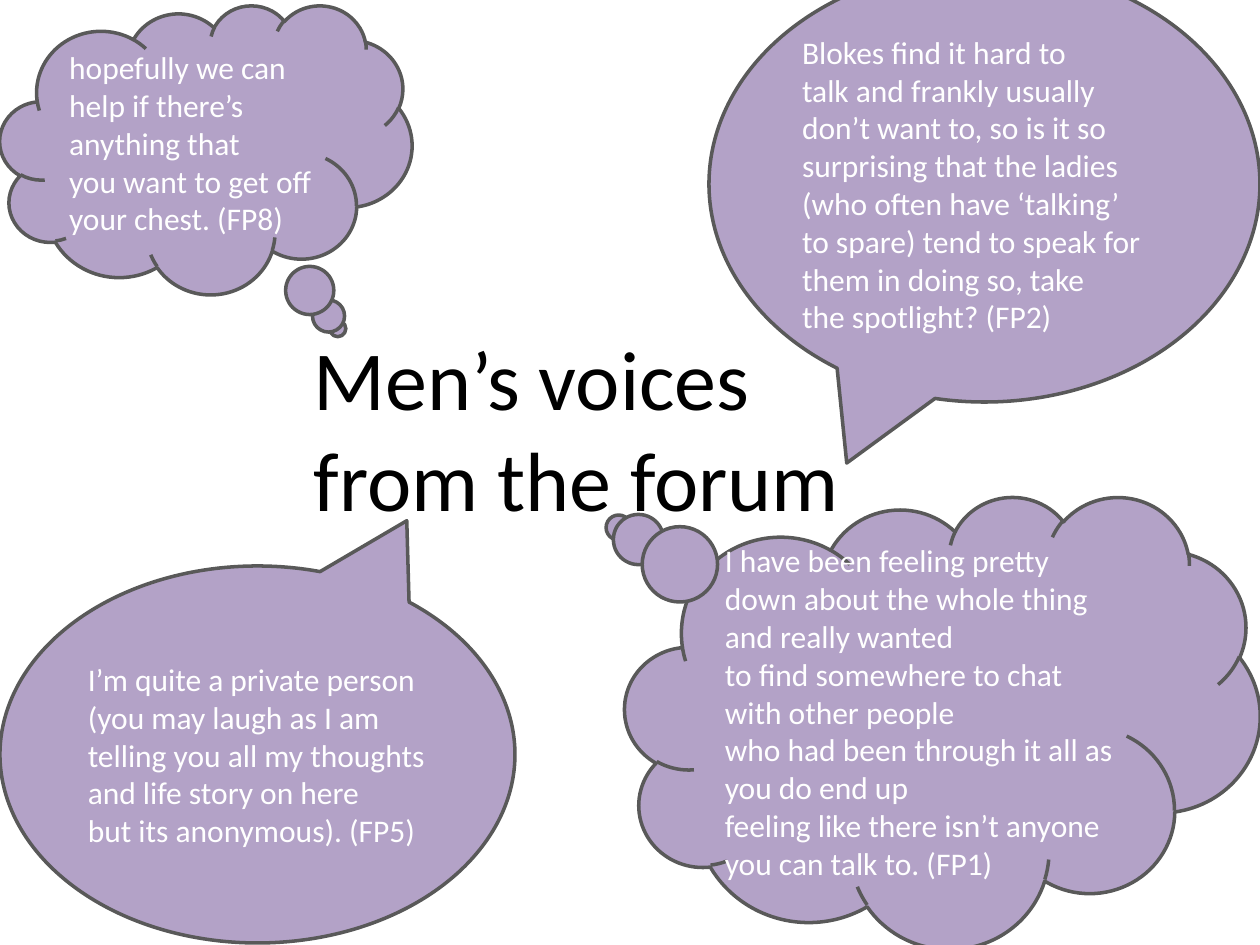
from pptx import Presentation
from pptx.dml.color import RGBColor
from pptx.enum.shapes import MSO_SHAPE
from pptx.enum.text import MSO_ANCHOR, MSO_AUTO_SIZE, PP_ALIGN
from pptx.util import Pt

SPEECH = MSO_SHAPE.OVAL_CALLOUT
THOUGHT = MSO_SHAPE.CLOUD_CALLOUT
TOP, MIDDLE = MSO_ANCHOR.TOP, MSO_ANCHOR.MIDDLE
LEFT = PP_ALIGN.LEFT
FIT_SHAPE = MSO_AUTO_SIZE.SHAPE_TO_FIT_TEXT
PX = 914400 / 126
TITLE_ONLY = 5

# Content: title, then bubbles as (kind, box in px, tail offset, paragraphs)
TITLE = "Men’s voices from the forum"
TITLE_BOX = (301, 320, 640, 217)
BUBBLES = [
    (SPEECH, (709, -34, 551, 436), (-0.25, 0.64), [
        "Blokes find it hard to",
        "talk and frankly usually don’t want to, so is it so",
        "surprising that the ladies (who often have ‘talking’",
        "to spare) tend to speak for them in doing so, take",
        "the spotlight? (FP2)",
    ]),
    (THOUGHT, (0, 5, 412, 289), (0.32, 0.62), [
        "hopefully we can help if there’s anything that",
        "you want to get off your chest. (FP8)",
    ]),
    (SPEECH, (0, 566, 515, 377), (0.29, -0.62), [
        "I’m quite a private person (you may laugh as I am",
        "telling you all my thoughts and life story on here",
        "but its anonymous). (FP5)",
    ]),
    (THOUGHT, (625, 496, 635, 452), (-0.51, -0.43), [
        "I have been feeling pretty",
        "down about the whole thing and really wanted",
        "to find somewhere to chat with other people",
        "who had been through it all as you do end up",
        "feeling like there isn’t anyone you can talk to. (FP1)",
    ]),
]


def px(length):
    return round(length * PX)


def color(hex_text):
    return RGBColor.from_string(hex_text)


def write(shape, paragraphs, size, font_color, anchor):
    frame = shape.text_frame
    frame.word_wrap = True
    frame.vertical_anchor = anchor
    frame.text = "\n".join(paragraphs)
    for paragraph in frame.paragraphs:
        paragraph.alignment = LEFT
        font = paragraph.runs[0].font
        font.name = "Calibri"
        font.size = Pt(size)
        font.color.rgb = color(font_color)


def add_bubble(slide, kind, box, tail, paragraphs):
    shape = slide.shapes.add_shape(kind, *map(px, box))
    shape.shadow.inherit = False
    for index, offset in enumerate(tail):
        shape.adjustments[index] = offset
    shape.fill.solid()
    shape.fill.fore_color.rgb = color("B3A2C7")
    shape.line.color.rgb = color("595959")
    shape.line.width = Pt(2)
    write(shape, paragraphs, size=18, font_color="FFFFFF", anchor=MIDDLE)


def main():
    presentation = Presentation()
    presentation.slide_width, presentation.slide_height = px(1260), px(945)
    slide = presentation.slides.add_slide(presentation.slide_layouts[TITLE_ONLY])

    # Quotes around the title
    for bubble in BUBBLES:
        add_bubble(slide, *bubble)

    # Title, brought in front of the bubbles
    title = slide.shapes.title
    title.left, title.top, title.width, title.height = map(px, TITLE_BOX)
    write(title, [TITLE], size=48, font_color="000000", anchor=TOP)
    title.text_frame.auto_size = FIT_SHAPE
    title.element.getparent().append(title.element)

    presentation.save("out.pptx")


if __name__ == "__main__":
    main()
